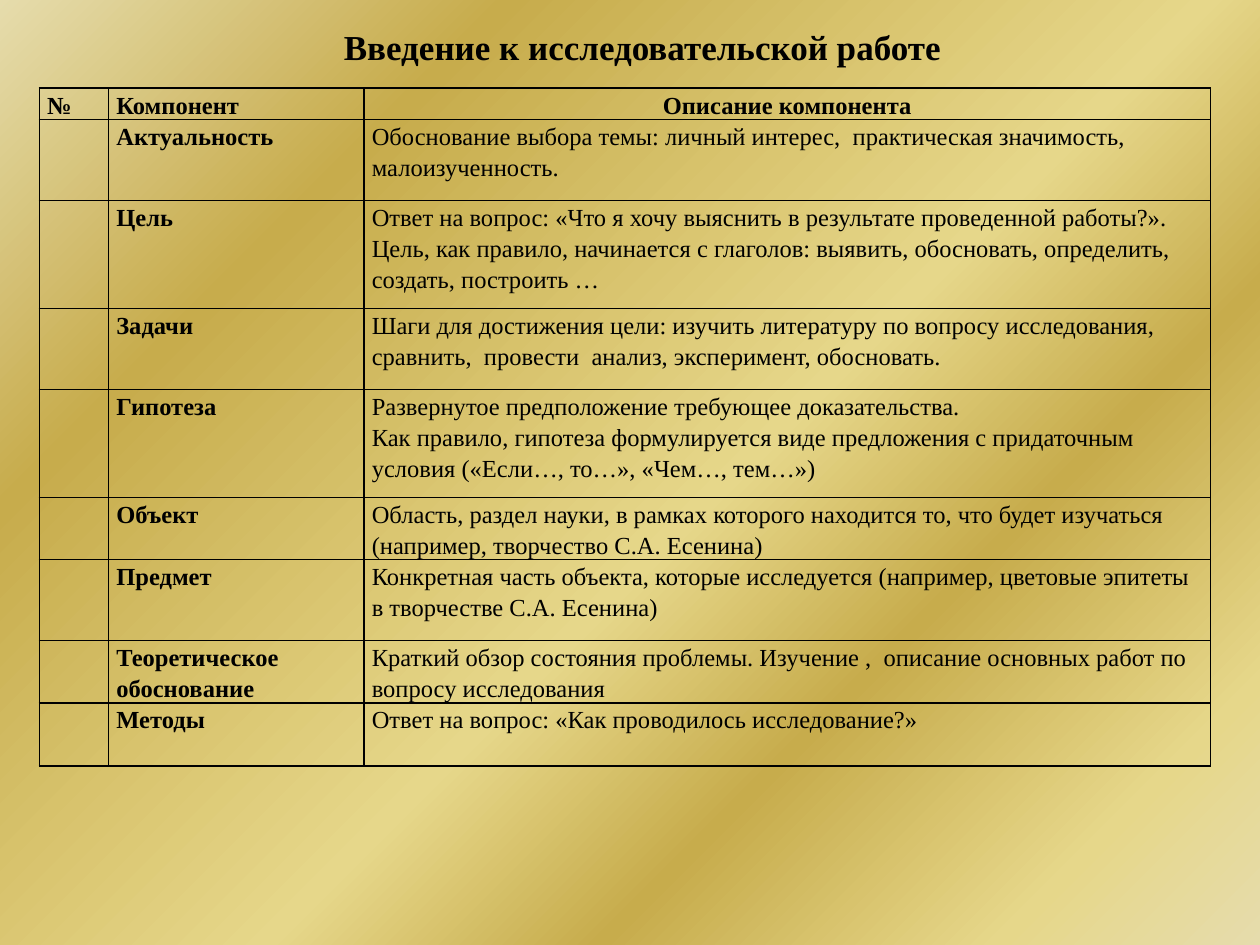
from dataclasses import dataclass
from typing import NamedTuple

from pptx import Presentation
from pptx.dml.color import RGBColor
from pptx.enum.text import MSO_ANCHOR, PP_ALIGN
from pptx.oxml import parse_xml
from pptx.oxml.ns import nsdecls
from pptx.util import Pt

LEFT = PP_ALIGN.LEFT
CENTER = PP_ALIGN.CENTER
TOP = MSO_ANCHOR.TOP
BLANK_LAYOUT = 6


@dataclass(frozen=True)
class Theme:
    font: str = "Times New Roman"
    ink: str = "000000"
    title_size: float = 20
    table_size: float = 14
    line_spacing: float = 1.15
    border_width: float = 1
    cell_margin: float = 4.5
    gradient: tuple = (
        (0, "E6DCAC"), (12, "E6D78A"), (30, "C7AC4C"),
        (45, "E6D78A"), (77, "C7AC4C"), (100, "E6DCAC"),
    )


class Component(NamedTuple):
    name: str
    description: str
    height: float


THEME = Theme()
COLUMN_WIDTHS = (39.5, 146, 483.8)
HEADER = ("№", "Компонент", "Описание компонента")
HEADER_HEIGHT = 17.7
COMPONENTS = (
    Component("Актуальность", "Обоснование выбора темы: личный интерес,  практическая значимость, малоизученность.", 46.3),
    Component("Цель", "Ответ на вопрос: «Что я хочу выяснить в результате проведенной работы?». Цель, как правило, начинается с глаголов: выявить, обосновать, определить, создать, построить …", 61.7),
    Component("Задачи", "Шаги для достижения цели: изучить литературу по вопросу исследования,  сравнить,  провести  анализ, эксперимент, обосновать.", 46.3),
    Component("Гипотеза", "Развернутое предположение требующее доказательства.\nКак правило, гипотеза формулируется виде предложения с придаточным условия («Если…, то…», «Чем…, тем…»)", 61.7),
    Component("Объект", "Область, раздел науки, в рамках которого находится то, что будет изучаться (например, творчество С.А. Есенина)", 35.4),
    Component("Предмет", "Конкретная часть объекта, которые исследуется (например, цветовые эпитеты в творчестве С.А. Есенина)", 46.3),
    Component("Теоретическое обоснование", "Краткий обзор состояния проблемы. Изучение ,  описание основных работ по вопросу исследования", 35.4),
    Component("Методы", "Ответ на вопрос: «Как проводилось исследование?»", 36),
)


def write_text(frame, text: str, *, size: float, bold: bool = False,
               align=LEFT, spacing: float = 1.0) -> None:
    frame.text = text
    for paragraph in frame.paragraphs:
        paragraph.alignment = align
        paragraph.line_spacing = spacing
        paragraph.font.size = Pt(size)
        for run in paragraph.runs:
            run.font.name = THEME.font
            run.font.size = Pt(size)
            run.font.bold = bold
            run.font.color.rgb = RGBColor.from_string(THEME.ink)


def paint_background(slide) -> None:
    fill = slide.background.fill
    fill.gradient()
    stops = "".join(
        f'<a:gs pos="{position * 1000}"><a:srgbClr val="{color}"/></a:gs>'
        for position, color in THEME.gradient
    )
    gradient = parse_xml(
        f'<a:gradFill {nsdecls("a")} rotWithShape="1"><a:gsLst>{stops}</a:gsLst>'
        '<a:path path="circle"><a:fillToRect l="100000" t="100000"/></a:path>'
        "</a:gradFill>"
    )
    for current in slide.element.xpath(".//p:bgPr/a:gradFill"):
        current.getparent().replace(current, gradient)


def draw_borders(cell) -> None:
    properties = cell._tc.get_or_add_tcPr()
    for side in ("lnL", "lnR", "lnT", "lnB"):
        properties.append(parse_xml(
            f'<a:{side} {nsdecls("a")} w="{Pt(THEME.border_width)}"><a:solidFill>'
            f'<a:srgbClr val="{THEME.ink}"/></a:solidFill></a:{side}>'
        ))


def fill_cell(cell, text: str, *, bold: bool, align=LEFT) -> None:
    cell.margin_left = cell.margin_right = Pt(THEME.cell_margin)
    cell.margin_top = cell.margin_bottom = Pt(0)
    cell.vertical_anchor = TOP
    write_text(cell.text_frame, text, size=THEME.table_size, bold=bold,
               align=align, spacing=THEME.line_spacing)
    draw_borders(cell)
    cell.fill.background()


def add_title(slide, text: str) -> None:
    box = slide.shapes.add_textbox(Pt(180), Pt(11.2), Pt(374.4), Pt(53.3))
    box.text_frame.word_wrap = True
    box.text_frame.vertical_anchor = TOP
    write_text(box.text_frame, text, size=THEME.title_size, bold=True, align=CENTER)


def add_component_table(slide) -> None:
    heights = (HEADER_HEIGHT, *(component.height for component in COMPONENTS))
    table = slide.shapes.add_table(
        len(heights), len(COLUMN_WIDTHS), Pt(22.5), Pt(50.4),
        Pt(sum(COLUMN_WIDTHS)), Pt(sum(heights)),
    ).table
    table.first_row = False
    table.horz_banding = False
    for column, width in zip(table.columns, COLUMN_WIDTHS):
        column.width = Pt(width)
    for row, height in zip(table.rows, heights):
        row.height = Pt(height)

    for column, (text, align) in enumerate(zip(HEADER, (LEFT, LEFT, CENTER))):
        fill_cell(table.cell(0, column), text, bold=True, align=align)
    for row, component in enumerate(COMPONENTS, start=1):
        fill_cell(table.cell(row, 0), "", bold=True)
        fill_cell(table.cell(row, 1), component.name, bold=True)
        fill_cell(table.cell(row, 2), component.description, bold=False)


def main() -> None:
    presentation = Presentation()
    presentation.slide_width = Pt(720)
    presentation.slide_height = Pt(540)
    slide = presentation.slides.add_slide(presentation.slide_layouts[BLANK_LAYOUT])
    paint_background(slide)
    add_component_table(slide)
    add_title(slide, "Введение к исследовательской работе")
    presentation.save("out.pptx")


if __name__ == "__main__":
    main()
